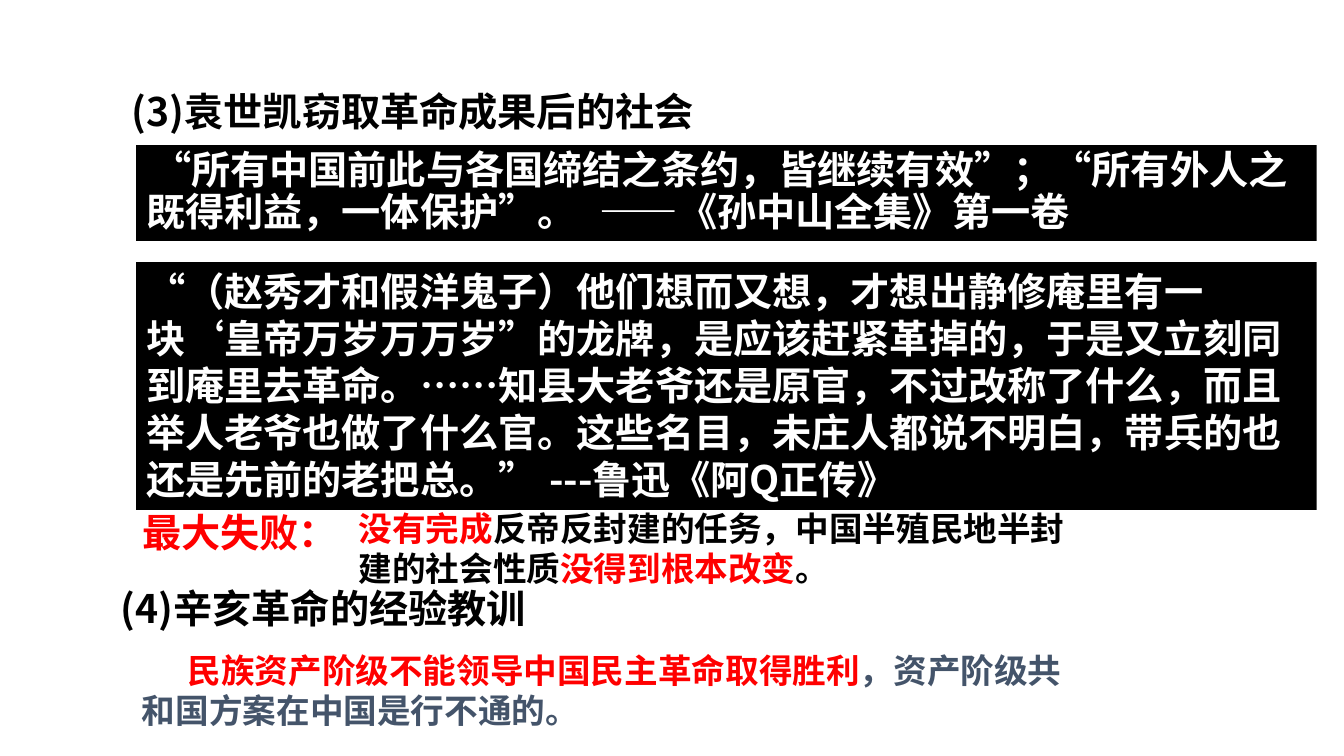
from dataclasses import dataclass
from lxml.etree import SubElement as Sub
from pptx import Presentation
from pptx.dml.color import RGBColor as Rgb
from pptx.enum.lang import MSO_LANGUAGE_ID as Lang
from pptx.enum.shapes import MSO_SHAPE as Kind
from pptx.enum.text import MSO_ANCHOR as Anchor, PP_ALIGN as Align
from pptx.oxml.ns import qn
from pptx.slide import Slide
from pptx.text.text import _Paragraph as Para
from pptx.util import Inches, Pt

WIDE, HIGH = Inches(13.33), Inches(7.5)
HEX = {"black": "000000", "white": "FFFFFF", "red": "FF0000", "slate": "44546A"}
SANS, ROMAN, CABIN = "Noto Sans CJK SC", "Times New Roman", "Cabin"
FRAME = {"vertical_anchor": Anchor.TOP}


@dataclass
class Span:
    text: str
    color: str = "black"
    face: str = SANS


@dataclass
class Block:
    """Places, indent and tab are percent shares of the slide."""
    left: float
    top: float
    width: float
    height: float
    spans: list[Span]
    size: int = 28
    fill: str = ""
    lead: float = 1.2
    indent: float = 0
    tab: float = 0
    wrap: bool = True


def share(part: float, whole: int) -> int:
    return round(part * whole / 100)


def quote(*parts: str) -> list[Span]:
    """White spans that switch between the roman and the sans face."""
    return [Span(t, "white", (ROMAN, SANS)[i % 2]) for i, t in enumerate(parts)]


# Content from top to bottom
BLOCKS = [
    Block(9.08, 10.93, 48.75, 7.6, [Span("(3)袁世凯窃取革命成果后的社会")]),
    Block(10.13, 19.2, 87.83, 12.67, [
        Span("“所有中国前此与各国缔结之条约，皆继续有效”；“所有外人之既得利益，"
             "一体保护”。\t——《孙中山全集》第一卷", "white"),
    ], fill="black", lead=1.07, indent=0.45, tab=40.05),
    Block(10.13, 34.67, 87.83, 32.8, quote(
        "“", "（赵秀才和假洋鬼子）他们想而又想，才想出静修庵里有一块",
        "‘", "皇帝万岁万万岁",
        "”", "的龙牌，是应该赶紧革掉的，于是又立刻同到庵里去革命。",
        "……", "知县大老爷还是原官，不过改称了什么，而且举人老爷也做了什么官。"
        "这些名目，未庄人都说不明白，带兵的也还是先前的老把总。",
        "”\t", "---鲁迅《阿Q正传》",
    ), fill="black", tab=45.6),
    Block(9.83, 66.53, 16.13, 7.6, [Span("最大失败：", "red", ROMAN)], wrap=False),
    Block(25.95, 66.53, 56.1, 12.13, [
        Span("没有完成", "red", ROMAN),
        Span("反帝反封建的任务，中国半殖民地半封建的社会性质", "black", ROMAN),
        Span("没得到根本改变", "red", ROMAN),
        Span("。", "black", ROMAN),
    ], size=24),
    Block(8.25, 76.67, 48.75, 7.6, [Span("(4)辛亥革命的经验教训")]),
    Block(9.83, 85.33, 71.48, 12.13, [
        Span("民族资产阶级不能领导中国民主革命取得胜利", "red", CABIN),
        Span("，资产阶级共和国方案在中国是行不通的。", "slate", CABIN),
    ], size=24, indent=3.4),
]


def write(para: Para, span: Span, size: int) -> None:
    run = para.add_run()
    run.text = span.text
    look = {"name": span.face, "size": Pt(size), "bold": True,
            "language_id": Lang.SIMPLIFIED_CHINESE}
    for key, val in look.items():
        setattr(run.font, key, val)
    run.font.color.rgb = Rgb.from_string(HEX[span.color])
    Sub(run.font._element, qn("a:ea")).set("typeface", SANS)


def draw(slide: Slide, block: Block) -> None:
    spot = (share(block.left, WIDE), share(block.top, HIGH),
            share(block.width, WIDE), share(block.height, HIGH))
    if block.fill:
        shape = slide.shapes.add_shape(Kind.RECTANGLE, *spot)
        shape.shadow.inherit = False
        shape.fill.solid()
        shape.fill.fore_color.rgb = Rgb.from_string(HEX[block.fill])
        shape.line.fill.background()
    else:
        shape = slide.shapes.add_textbox(*spot)
    frame = shape.text_frame
    for key, val in (FRAME | {"word_wrap": block.wrap}).items():
        setattr(frame, key, val)

    # Paragraph: fixed pitch, first-line indent, tab stop for the source
    para = frame.paragraphs[0]
    form = {"alignment": Align.LEFT, "line_spacing": Pt(block.lead * block.size)}
    for key, val in form.items():
        setattr(para, key, val)
    props = para._p.get_or_add_pPr()
    props.set("indent", str(share(block.indent, WIDE)))
    if block.tab:
        stop = Sub(Sub(props, qn("a:tabLst")), qn("a:tab"))
        stop.set("pos", str(share(block.tab, WIDE)))
        stop.set("algn", "l")
    for span in block.spans:
        write(para, span, block.size)


def main() -> None:
    deck = Presentation()
    deck.slide_width, deck.slide_height = WIDE, HIGH
    slide = deck.slides.add_slide(deck.slide_layouts[6])
    for block in BLOCKS:
        draw(slide, block)
    deck.save("out.pptx")


if __name__ == "__main__":
    main()
